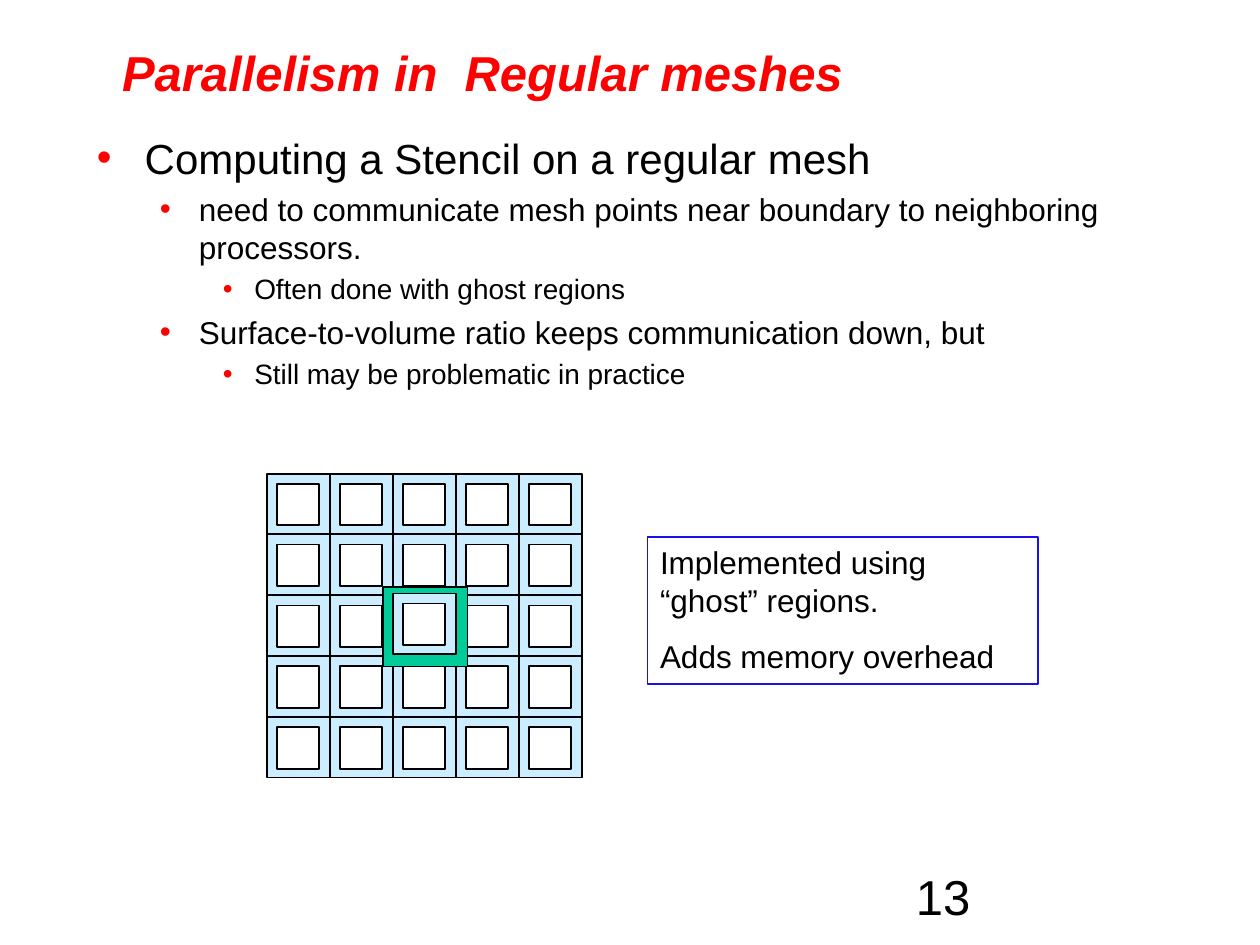
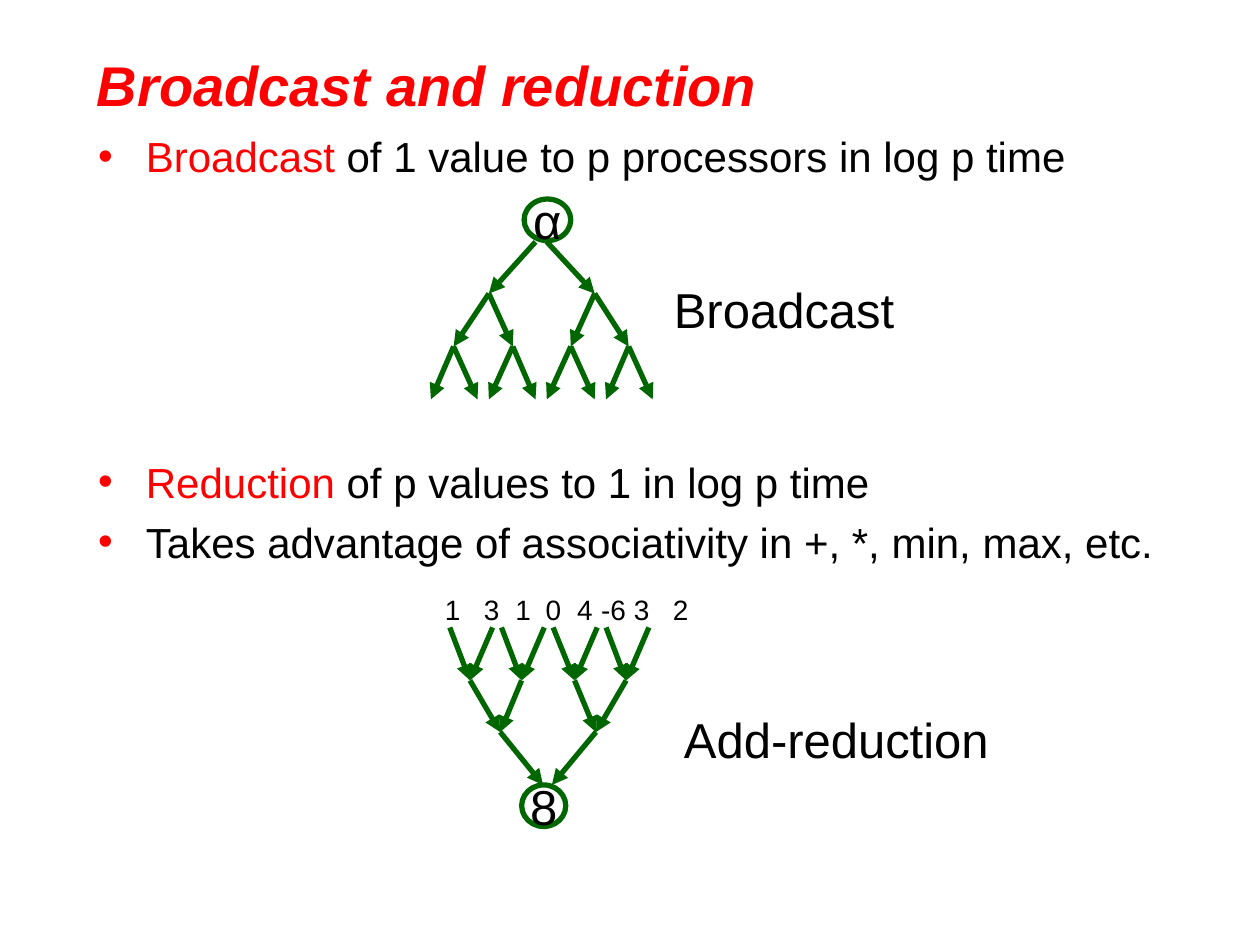
from dataclasses import dataclass
from itertools import pairwise, product

from lxml.etree import SubElement
from pptx import Presentation
from pptx.dml.color import RGBColor as RGB
from pptx.enum.shapes import MSO_CONNECTOR as Link, MSO_SHAPE as Kind
from pptx.enum.text import MSO_ANCHOR as Anchor, PP_ALIGN as Align
from pptx.oxml.ns import qn
from pptx.slide import Slide
from pptx.util import Inches, Pt


@dataclass(frozen=True)
class Theme:
    font: str = "Arial"
    ink: RGB = RGB(0, 0, 0)
    red: RGB = RGB(0xFF, 0, 0)
    white: RGB = RGB(0xFF, 0xFF, 0xFF)
    pale: RGB = RGB(0xCC, 0xEC, 0xFF)
    ghost: RGB = RGB(0, 0xCC, 0x99)
    frame: RGB = RGB(0x1A, 0x0F, 0xEF)
    green: RGB = RGB(0, 0x66, 0)
    big: int = 28
    note: int = 18
    small: int = 16
    levels: tuple[int, ...] = (24, 18, 16)
    thin: float = 1
    thick: float = 3


THEME = Theme()
LEADING = 1.15  # line height relative to type size
MARGINS = ((0.38, -0.38), (0.81, -0.31), (1.25, -0.25))  # left edge, first line


@dataclass(frozen=True)
class Box:
    left: float
    top: float
    width: float
    height: float

    def lengths(self) -> list:
        return [Inches(v) for v in (self.left, self.top, self.width, self.height)]


@dataclass(frozen=True)
class Item:
    text: str
    level: int = 0
    key: str = ""  # opening words set in red
    gap: float | None = None  # space before, in points


@dataclass(frozen=True)
class Row:
    top: float
    xs: tuple[float, ...]


# Text helpers
def style(para, size: float, color: RGB = THEME.ink) -> None:
    font = para.font
    font.name, font.size, font.color.rgb = THEME.font, Pt(size), color


def add_text(slide: Slide, box: Box, lines: list[str], size: float):
    shape = slide.shapes.add_textbox(*box.lengths())
    frame = shape.text_frame
    frame.word_wrap = True
    frame.text = "\n".join(lines)
    for i, para in enumerate(frame.paragraphs):
        para.space_before = Pt(0.5 * LEADING * size if i else 0)
        style(para, size)
    return shape


def add_title(slide: Slide, box: Box, text: str, size: float) -> None:
    frame = add_text(slide, box, [text], size).text_frame
    frame.vertical_anchor = Anchor.MIDDLE
    font = frame.paragraphs[0].font
    font.bold = font.italic = True
    font.color.rgb = THEME.red


def add_bullet(para, level: int) -> None:
    left, first = MARGINS[level]
    props = para._p.get_or_add_pPr()
    props.set("marL", str(Inches(left)))
    props.set("indent", str(Inches(first)))
    tint = SubElement(props, qn("a:buClr"))
    SubElement(tint, qn("a:srgbClr"), val=str(THEME.red))
    SubElement(props, qn("a:buFont"), typeface=THEME.font)
    SubElement(props, qn("a:buChar"), char="•")


def add_body(slide: Slide, box: Box, items: list[Item]) -> None:
    frame = slide.shapes.add_textbox(*box.lengths()).text_frame
    frame.word_wrap = True
    for i, item in enumerate(items):
        para = frame.add_paragraph() if i else frame.paragraphs[0]
        size = THEME.levels[item.level]
        para.level = item.level
        add_bullet(para, item.level)
        gap = 0.2 * LEADING * size if item.gap is None else item.gap
        para.space_before = Pt(gap if i else 0)
        style(para, size)
        if item.key:
            run = para.add_run()
            run.text, run.font.color.rgb = item.key, THEME.red
        para.add_run().text = item.text


# Shape helpers
def add_shape(slide: Slide, kind: Kind, box: Box, fill: RGB | None,
              line: RGB, width: float):
    shape = slide.shapes.add_shape(kind, *box.lengths())
    shape.shadow.inherit = False
    if fill is None:
        shape.fill.background()
    else:
        shape.fill.solid()
        shape.fill.fore_color.rgb = fill
    shape.line.color.rgb, shape.line.width = line, Pt(width)
    return shape


def add_square(slide: Slide, box: Box, fill: RGB) -> None:
    add_shape(slide, Kind.RECTANGLE, box, fill, THEME.ink, THEME.thin)


def add_cell(slide: Slide, left: float, top: float) -> None:
    add_square(slide, Box(left, top, 0.5, 0.48), THEME.pale)
    add_square(slide, Box(left + 0.08, top + 0.08, 0.33, 0.33), THEME.white)


def add_node(slide: Slide, box: Box, text: str) -> None:
    shape = add_shape(slide, Kind.OVAL, box, None, THEME.green, THEME.thick)
    frame = shape.text_frame
    frame.word_wrap, frame.vertical_anchor = False, Anchor.MIDDLE
    para = frame.paragraphs[0]
    para.text, para.alignment = text, Align.CENTER
    style(para, THEME.big)


def add_arrow(slide: Slide, start: tuple[float, float], end: tuple[float, float]) -> None:
    ends = [Inches(v) for v in (*start, *end)]
    link = slide.shapes.add_connector(Link.STRAIGHT, *ends)
    link.line.color.rgb, link.line.width = THEME.green, Pt(THEME.thick)
    SubElement(link.line._get_or_add_ln(), qn("a:tailEnd"), type="triangle")
    SubElement(link._element.spPr, qn("a:effectLst"))


def add_tree(slide: Slide, rows: list[Row], inward: bool = False) -> None:
    """Join each row, root first, to the next; inward arrows point to the root."""
    for upper, lower in pairwise(rows):
        for i, x in enumerate(lower.xs):
            parent = upper.xs[i * len(upper.xs) // len(lower.xs)]
            ends = [(parent, upper.top), (x, lower.top)]
            add_arrow(slide, *(reversed(ends) if inward else ends))


def add_values(slide: Slide, box: Box, values: list[str], stops: list[float]) -> None:
    frame = add_text(slide, box, ["\t".join(values)], THEME.small).text_frame
    frame.margin_left = Inches(0.22)
    props = frame.paragraphs[0]._p.get_or_add_pPr()
    tabs = SubElement(props, qn("a:tabLst"))
    for stop in stops:
        SubElement(tabs, qn("a:tab"), pos=str(Inches(stop)), algn="l")
    props.find(qn("a:defRPr")).addprevious(tabs)


# Slides
def draw_mesh(slide: Slide) -> None:
    add_text(slide, Box(7.17, 6.83, 2.08, 0.5), ["13"], THEME.big)

    # Mesh with one enlarged cell in the middle
    for col, row in product(range(5), repeat=2):
        if (col, row) != (2, 2):
            add_cell(slide, 2.12 + 0.5 * col, 3.76 + 0.483 * row)
    add_square(slide, Box(3.04, 4.66, 0.67, 0.63), THEME.ghost)
    add_cell(slide, 3.12, 4.71)

    add_title(slide, Box(0.87, 0.34, 7.38, 0.46), "Parallelism in  Regular meshes", 28)
    add_body(slide, Box(0.67, 1, 8.75, 1.93), [
        Item("Computing a Stencil on a regular mesh"),
        Item("need to communicate mesh points near boundary to neighboring processors.", 1),
        Item("Often done with ghost regions", 2),
        Item("Surface-to-volume ratio keeps communication down, but", 1),
        Item("Still may be problematic in practice", 2),
    ])
    lines = ["Implemented using “ghost” regions.", "Adds memory overhead"]
    note = add_text(slide, Box(5.14, 4.26, 3.1, 1.17), lines, THEME.note)
    note.line.color.rgb, note.line.width = THEME.frame, Pt(THEME.thin)


def draw_trees(slide: Slide) -> None:
    add_title(slide, Box(0.67, 0.33, 8.19, 0.67), "Broadcast and reduction", 32)
    add_body(slide, Box(0.68, 0.99, 8.67, 3.44), [
        Item(" of 1 value to p processors in log p time", key="Broadcast"),
        Item(" of p values to 1 in log p time", key="Reduction", gap=157),
        Item("Takes advantage of associativity in +, *, min, max, etc."),
    ])

    # Broadcast
    add_tree(slide, [
        Row(1.92, (4.25, 4.34)),
        Row(2.33, (3.88, 4.72)),
        Row(2.75, (3.6, 4.07, 4.53, 4.99)),
        Row(3.17, (3.42, 3.79, 3.88, 4.25, 4.34, 4.72, 4.81, 5.18)),
    ])
    add_node(slide, Box(4.16, 1.58, 0.37, 0.33), "α")
    add_text(slide, Box(5.25, 2.17, 3.08, 0.43), ["Broadcast"], THEME.big)

    # Reduction
    add_tree(slide, [
        Row(6.23, (4.31, 4.38)),
        Row(5.81, (3.97, 4.73)),
        Row(5.4, (3.73, 4.14, 4.56, 4.97)),
        Row(4.98, (3.57, 3.91, 3.98, 4.32, 4.39, 4.74, 4.81, 5.15)),
    ], inward=True)
    add_node(slide, Box(4.14, 6.23, 0.35, 0.33), "8")
    add_values(slide, Box(3.31, 4.65, 2.42, 0.37),
               ["1", "3", "1", "0", "4", "-6", "3", "2"],
               [0.31, 0.56, 0.8, 1.05, 1.24, 1.5, 1.81])
    add_text(slide, Box(5.33, 5.58, 2.67, 0.43), ["Add-reduction"], THEME.big)


def main() -> None:
    deck = Presentation()
    deck.slide_width, deck.slide_height = Inches(10), Inches(7.5)
    for draw in (draw_mesh, draw_trees):
        draw(deck.slides.add_slide(deck.slide_layouts[6]))
    deck.save("out.pptx")


if __name__ == "__main__":
    main()
